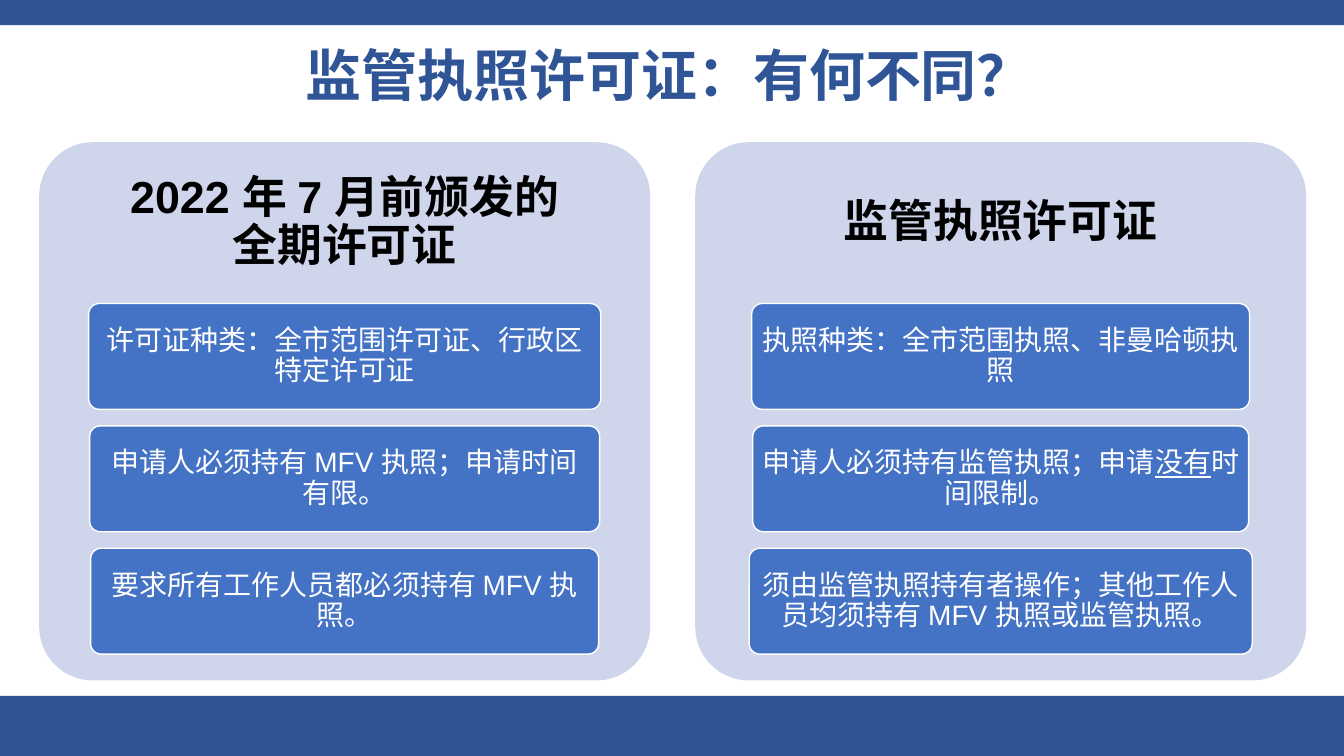
from lxml import etree
from pptx import Presentation
from pptx.dml.color import RGBColor
from pptx.enum.shapes import MSO_SHAPE
from pptx.enum.text import MSO_ANCHOR, PP_ALIGN
from pptx.oxml.ns import qn
from pptx.util import Pt

RECT, ROUND = MSO_SHAPE.RECTANGLE, MSO_SHAPE.ROUNDED_RECTANGLE
MIDDLE, CENTER = MSO_ANCHOR.MIDDLE, PP_ALIGN.CENTER

NAVY = RGBColor(0x2F, 0x55, 0x97)
PALE = RGBColor(0xCF, 0xD5, 0xEA)
BLUE = RGBColor(0x44, 0x72, 0xC4)
WHITE = RGBColor(0xFF, 0xFF, 0xFF)
BLACK = RGBColor(0, 0, 0)

LATIN, CJK = "Arial", "Noto Sans CJK TC"
SLIDE_W, SLIDE_H = 960, 540
PANEL_W, PANEL_H = 436.4, 384.5
HEADER_H = 115.2
CARD_H, CARD_STEP = 75.6, 87.4

# Each panel: left edge, header lines, cards as (width, runs of (text, underlined))
PANELS = [
    (28, ["2022 年 7 月前颁发的", "全期许可证"], [
        (365.8, [("许可证种类：全市范围许可证、行政区特定许可证", False)]),
        (364.3, [("申请人必须持有 MFV 执照；申请时间有限。", False)]),
        (362.9, [("要求所有工作人员都必须持有 MFV 执照。", False)]),
    ]),
    (496.6, ["监管执照许可证"], [
        (355.7, [("执照种类：全市范围执照、非曼哈顿执照", False)]),
        (354.2, [("申请人必须持有监管执照；申请", False), ("没有", True),
                 ("时间限制。", False)]),
        (359.3, [("须由监管执照持有者操作；其他工作人员均须持有 MFV 执照或监管执照。", False)]),
    ]),
]


def add_box(s, kind, x, y, w, h, fill, line=None):
    sp = s.shapes.add_shape(kind, Pt(x), Pt(y), Pt(w), Pt(h))
    sp.shadow.inherit = False
    sp.fill.solid()
    sp.fill.fore_color.rgb = fill
    if line is None:
        sp.line.fill.background()
    else:
        sp.line.color.rgb = line
        sp.line.width = Pt(1)
    if kind == ROUND:
        sp.adjustments[0] = 0.1
    return sp


def add_textbox(s, x, y, w, h):
    return s.shapes.add_textbox(Pt(x), Pt(y), Pt(w), Pt(h))


def prepare_text(sp, inset_x, inset_y):
    """Set up the text frame and return its centred first paragraph."""
    tf = sp.text_frame
    tf.word_wrap = True
    tf.vertical_anchor = MIDDLE
    tf.margin_left = tf.margin_right = Pt(inset_x)
    tf.margin_top = tf.margin_bottom = Pt(inset_y)
    p = tf.paragraphs[0]
    p.alignment = CENTER
    p.line_spacing = 0.9
    return p


def add_run(p, text, size, color, bold=False, underline=False):
    r = p.add_run()
    r.text = text
    r.font.size = Pt(size)
    r.font.bold = bold
    r.font.underline = underline
    r.font.color.rgb = color
    r.font.name = LATIN
    # East Asian typeface follows the Latin one
    ea = etree.Element(qn("a:ea"), typeface=CJK)
    r.font._element.find(qn("a:latin")).addnext(ea)


def add_bands(s):
    add_box(s, RECT, 0, 0, SLIDE_W, 18, NAVY)
    add_box(s, RECT, 0, 497, SLIDE_W, 43, NAVY)


def add_title(s, x, y, w, h):
    p = prepare_text(add_textbox(s, x, y, w, h), 7.2, 3.6)
    add_run(p, "监管执照许可证：有何不同？", 40, NAVY, bold=True)


def add_card(s, x, y, w, h, runs):
    p = prepare_text(add_box(s, ROUND, x, y, w, h, BLUE, WHITE), 4.3, 2.9)
    for text, underline in runs:
        add_run(p, text, 20, WHITE, underline=underline)


def add_panel(s, x, y, w, h, header, cards):
    add_box(s, ROUND, x, y, w, h, PALE)

    # Header
    p = prepare_text(add_textbox(s, x, y, w, HEADER_H), 9.6, 9.6)
    for i, line in enumerate(header):
        if i:
            p.add_line_break()
        add_run(p, line, 32, BLACK, bold=True)

    # Cards, centred in the panel
    for i, (card_w, runs) in enumerate(cards):
        add_card(s, x + (w - card_w) / 2, y + HEADER_H + i * CARD_STEP,
                 card_w, CARD_H, runs)


def main():
    prs = Presentation()
    prs.slide_width, prs.slide_height = Pt(SLIDE_W), Pt(SLIDE_H)
    s = prs.slides.add_slide(prs.slide_layouts[6])
    add_bands(s)
    add_title(s, -9.4, 28.8, 975, 54)
    for x, header, cards in PANELS:
        add_panel(s, x, 101.6, PANEL_W, PANEL_H, header, cards)
    prs.save("out.pptx")


if __name__ == "__main__":
    main()
